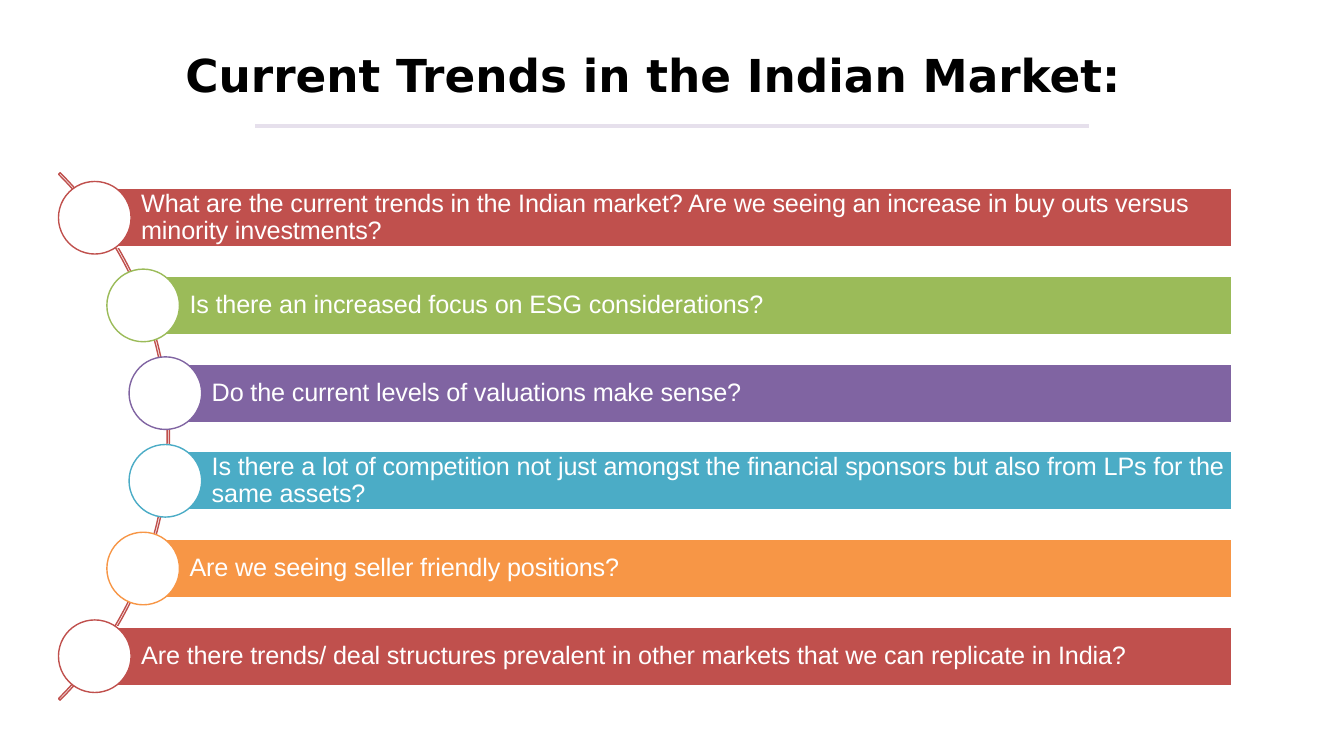
"""Build the slide of questions on current trends in the Indian market."""
import pptx
import pptx.util
import pptx.dml.color
import pptx.enum.shapes
import pptx.enum.text
from lxml import etree
from dataclasses import dataclass

Inches = pptx.util.Inches
Pt = pptx.util.Pt
RGB = pptx.dml.color.RGBColor.from_string
Preset = pptx.enum.shapes.MSO_SHAPE
Anchor = pptx.enum.text.MSO_ANCHOR
Align = pptx.enum.text.PP_ALIGN


@dataclass
class Theme:
    """Colours, fonts and type sizes of the slide."""
    white: str = "FFFFFF"
    black: str = "000000"
    rule: str = "E6E0EC"
    red: str = "C0504D"
    green: str = "9BBB59"
    purple: str = "8064A2"
    teal: str = "4BACC6"
    orange: str = "F79646"
    title_font: str = "DejaVu Sans"
    space_font: str = "Calibri"
    body_font: str = "Arial"
    title_size: float = 32.4
    space_size: float = 36
    body_size: float = 18


theme = Theme()


def add_preset(page, preset, left, top, width, height, fill, line):
    """Add a preset shape with a flat fill and a thin outline."""
    shape = page.shapes.add_shape(
        preset, Inches(left), Inches(top), Inches(width), Inches(height))
    shape.shadow.inherit = False
    if fill:
        shape.fill.solid()
        shape.fill.fore_color.rgb = RGB(fill)
    else:
        shape.fill.background()
    shape.line.color.rgb = RGB(line)
    shape.line.width = Pt(1)
    return shape


def add_span(para, text, font, size, color, bold=False):
    """Add one formatted run to a paragraph."""
    span = para.add_run()
    span.text = text
    span.font.name = font
    span.font.size = Pt(size)
    span.font.bold = bold
    span.font.color.rgb = RGB(color)
    return span


deck = pptx.Presentation()
deck.slide_width = Inches(13.33)
deck.slide_height = Inches(7.5)
page = deck.slides.add_slide(deck.slide_layouts[6])

arc = add_preset(page, Preset.BLOCK_ARC, -5.72, 0.63, 7.4, 7.4, None, theme.red)
for index, value in enumerate((189, 27, 0.003)):
    arc.adjustments[index] = value

questions = [
    (0.94, theme.red, "What are the current trends in the Indian market? "
     "Are we seeing an increase in buy outs versus minority investments?"),
    (1.42, theme.green, "Is there an increased focus on ESG considerations?"),
    (1.64, theme.purple, "Do the current levels of valuations make sense?"),
    (1.64, theme.teal, "Is there a lot of competition not just amongst the "
     "financial sponsors but also from LPs for the same assets?"),
    (1.42, theme.orange, "Are we seeing seller friendly positions?"),
    (0.94, theme.red, "Are there trends/ deal structures prevalent in other "
     "markets that we can replicate in India?"),
]
bars_right = 12.22
first_center = 2.16
row_pitch = 0.87
bar_height = 0.58
circle_size = 0.72

for row, (left, color, question) in enumerate(questions):
    center = first_center + row * row_pitch
    bar = add_preset(page, Preset.RECTANGLE, left, center - bar_height / 2,
                     bars_right - left, bar_height, color, theme.white)
    frame = bar.text_frame
    frame.word_wrap = True
    frame.vertical_anchor = Anchor.MIDDLE
    frame.margin_left = Inches(0.46)
    frame.margin_right = frame.margin_top = frame.margin_bottom = Inches(0.05)
    para = frame.paragraphs[0]
    para.alignment = Align.LEFT
    para.line_spacing = 0.9
    span = add_span(para, question, theme.body_font, theme.body_size, theme.white)
    span.font._element.set("spc", "-10")
    add_preset(page, Preset.OVAL, left - circle_size / 2, center - circle_size / 2,
               circle_size, circle_size, theme.white, color)

title = page.shapes.add_textbox(Inches(0.77), Inches(0.42), Inches(11.53), Inches(0.67))
title.text_frame.word_wrap = True
title.text_frame.vertical_anchor = Anchor.MIDDLE
para = title.text_frame.paragraphs[0]
para.alignment = Align.CENTER
para.line_spacing = 0.9
add_span(para, "Current Trends in the Indian Market:", theme.title_font,
         theme.title_size, theme.black, bold=True)
add_span(para, " ", theme.space_font, theme.space_size, theme.black)

rule = page.shapes.add_connector(
    pptx.enum.shapes.MSO_CONNECTOR.STRAIGHT,
    Inches(2.53), Inches(1.25), Inches(10.8), Inches(1.25))
rule.line.color.rgb = RGB(theme.rule)
rule.line.width = Pt(3)
etree.SubElement(rule._element.spPr, pptx.oxml.ns.qn("a:effectLst"))

deck.save("out.pptx")
